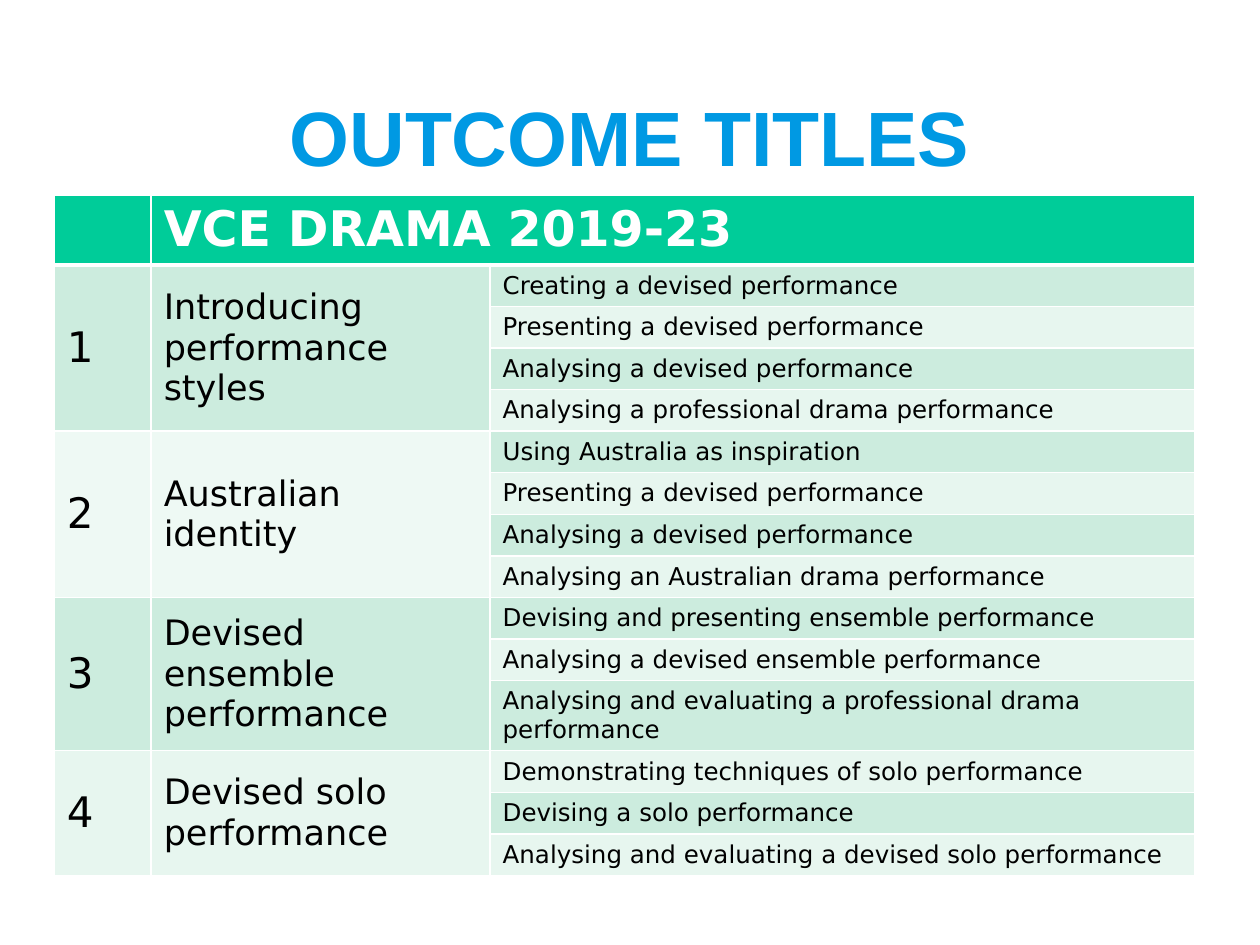
from lxml.etree import SubElement
from pptx import Presentation
from pptx.dml.color import RGBColor
from pptx.enum.text import MSO_ANCHOR, PP_ALIGN
from pptx.oxml.ns import qn
from pptx.util import Inches, Pt

BLUE = RGBColor(0x00, 0x99, 0xE3)
GREEN = RGBColor(0x00, 0xCC, 0x99)
MINT = RGBColor(0xCC, 0xEC, 0xDE)
PALE = RGBColor(0xE7, 0xF6, 0xEF)
FAINT = RGBColor(0xEE, 0xF9, 0xF4)
WHITE = RGBColor(0xFF, 0xFF, 0xFF)
BLACK = RGBColor(0x00, 0x00, 0x00)

HEAD = {"size": Pt(28), "bold": True, "color": WHITE}
NUMBER = {"size": Pt(24), "bold": False, "color": BLACK}
TOPIC = {**NUMBER, "size": Pt(20)}
OUTCOME = {**NUMBER, "size": Pt(14)}

UNITS = [
    ("Introducing performance styles", MINT, [
        "Creating a devised performance",
        "Presenting a devised performance",
        "Analysing a devised performance",
        "Analysing a professional drama performance"]),
    ("Australian identity", FAINT, [
        "Using Australia as inspiration",
        "Presenting a devised performance",
        "Analysing a devised performance",
        "Analysing an Australian drama performance"]),
    ("Devised ensemble performance", MINT, [
        "Devising and presenting ensemble performance",
        "Analysing a devised ensemble performance",
        "Analysing and evaluating a professional drama performance"]),
    ("Devised solo performance", PALE, [
        "Demonstrating techniques of solo performance",
        "Devising a solo performance",
        "Analysing and evaluating a devised solo performance"]),
]
COLUMNS = [0.77, 2.69, 5.59]
TALL = {0, 11}


def style(font, values, name="DejaVu Sans"):
    font.name = name
    for key, value in values.items():
        if key == "color":
            font.color.rgb = value
        else:
            setattr(font, key, value)


def border(cell, widths):
    props = cell._tc.get_or_add_tcPr()
    for side, width in widths.items():
        line = SubElement(props, qn(f"a:ln{side}"), w=str(Pt(width)))
        fill = SubElement(line, qn("a:solidFill"))
        SubElement(fill, qn("a:srgbClr"), val=str(WHITE))


def paint(cell, color):
    cell.fill.solid()
    cell.fill.fore_color.rgb = color


def write(cell, text, values, anchor=MSO_ANCHOR.MIDDLE):
    cell.text = text
    cell.vertical_anchor = anchor
    style(cell.text_frame.paragraphs[0].runs[0].font, values)


def add_title(slide, left, top, width, height):
    title = slide.shapes.title
    title.left, title.top, title.width, title.height = left, top, width, height
    frame = title.text_frame
    frame.text = "OUTCOME TITLES"
    frame.vertical_anchor = MSO_ANCHOR.MIDDLE
    frame.paragraphs[0].alignment = PP_ALIGN.CENTER
    style(frame.paragraphs[0].runs[0].font,
          {"size": Pt(44), "bold": True, "color": BLUE}, "Arial")


def add_units(slide, left, top, width, height):
    count = 1 + sum(len(items) for _, _, items in UNITS)
    table = slide.shapes.add_table(count, 3, left, top, width, height).table
    for column, size in zip(table.columns, COLUMNS):
        column.width = Inches(size)
    for index, row in enumerate(table.rows):
        row.height = Inches(0.55 if index in TALL else 0.33)
        for cell in row.cells:
            border(cell, {"L": 1, "R": 1, "T": 3 if index == 1 else 1,
                          "B": 3 if index == 0 else 1})
            paint(cell, GREEN if index == 0 else MINT if index % 2 else PALE)

    table.cell(0, 1).merge(table.cell(0, 2))
    write(table.cell(0, 1), "VCE DRAMA 2019-23", HEAD, MSO_ANCHOR.TOP)
    start = 1
    for number, (topic, color, items) in enumerate(UNITS, 1):
        last = start + len(items) - 1
        for col, text, values in ((0, str(number), NUMBER), (1, topic, TOPIC)):
            cell = table.cell(start, col)
            cell.merge(table.cell(last, col))
            write(cell, text, values)
            paint(cell, color)
        for row, item in enumerate(items, start):
            write(table.cell(row, 2), item, OUTCOME)
        start = last + 1


def main():
    deck = Presentation()
    deck.slide_width, deck.slide_height = Inches(10), Inches(7.5)
    slide = deck.slides.add_slide(deck.slide_layouts[5])
    add_title(slide, Inches(0.5), Inches(0.6), Inches(9), Inches(0.95))
    add_units(slide, Inches(0.43), Inches(1.55), Inches(9.05), Inches(5.39))
    deck.save("out.pptx")


if __name__ == "__main__":
    main()
